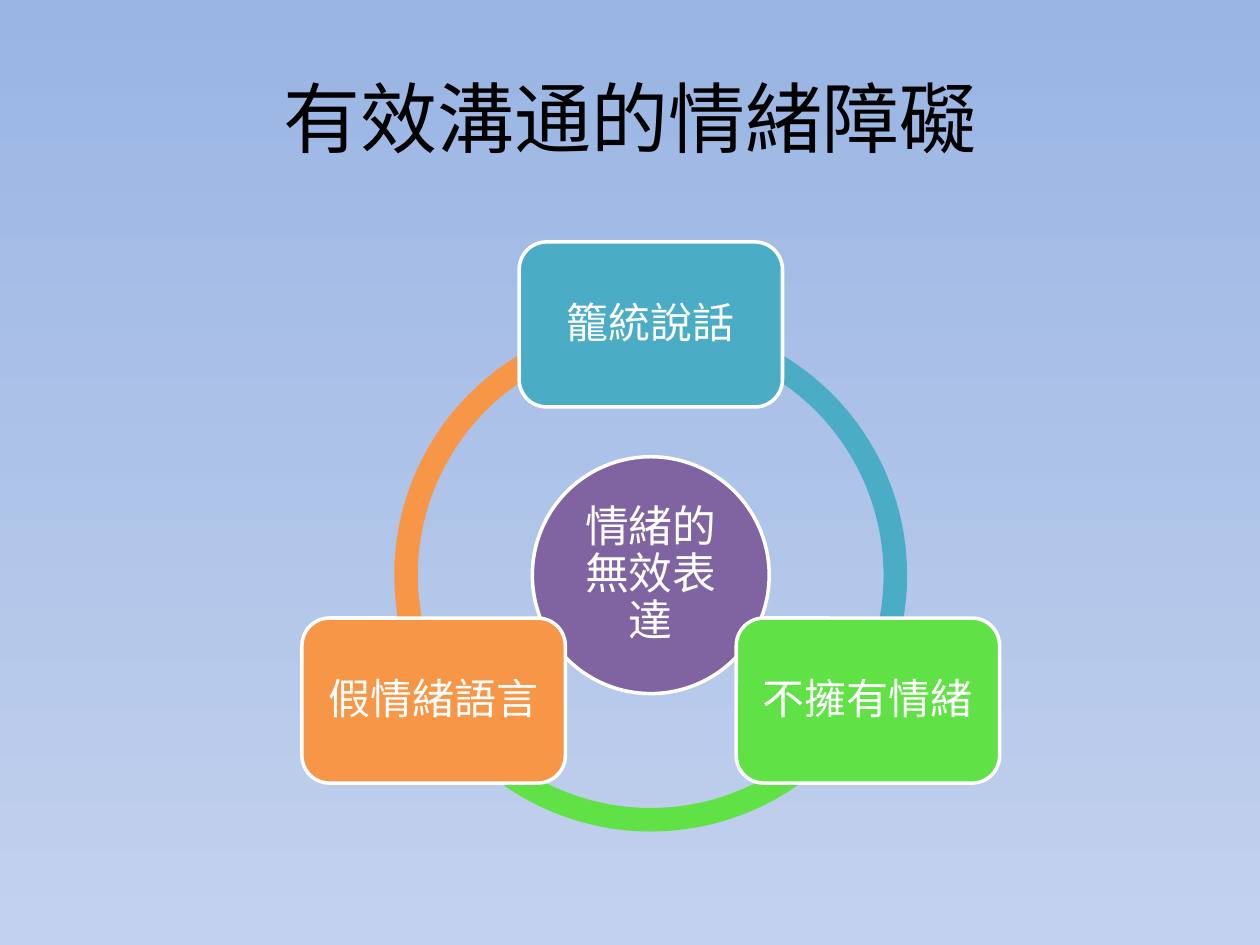
import math

from lxml import etree
from pptx import Presentation
from pptx.dml.color import RGBColor
from pptx.enum.shapes import MSO_SHAPE
from pptx.enum.text import MSO_ANCHOR, PP_ALIGN
from pptx.oxml.ns import qn
from pptx.util import Inches, Pt

ARC = MSO_SHAPE.BLOCK_ARC
OVAL = MSO_SHAPE.OVAL
ROUNDED = MSO_SHAPE.ROUNDED_RECTANGLE
MIDDLE = MSO_ANCHOR.MIDDLE
CENTER = PP_ALIGN.CENTER

FONT = "Noto Sans CJK SC"
TITLE_ONLY = 5
COLORS = {
    "sky_top": "9AB5E4", "sky_bottom": "C2D1ED",
    "black": "000000", "white": "FFFFFF", "purple": "8064A2",
    "teal": "4BACC6", "green": "60E146", "orange": "F79646",
}
# Label, colour and angle in degrees, clockwise from the right
NODES = [
    ("籠統說話", "teal", 270),
    ("不擁有情緒", "green", 30),
    ("假情緒語言", "orange", 150),
]


def rgb(name):
    return RGBColor.from_string(COLORS[name])


def write_text(shape, text, *, size, color, margin=None, line_spacing=None):
    frame = shape.text_frame
    frame.word_wrap = True
    frame.vertical_anchor = MIDDLE
    if margin is not None:
        frame.margin_left = frame.margin_right = margin
        frame.margin_top = frame.margin_bottom = margin
    paragraph = frame.paragraphs[0]
    paragraph.alignment = CENTER
    paragraph.line_spacing = line_spacing
    run = paragraph.add_run()
    run.text = text
    run.font.size = Pt(size)
    run.font.color.rgb = rgb(color)
    run.font.name = FONT
    # East Asian characters take their own typeface setting
    etree.SubElement(run.font._element, qn("a:ea"), typeface=FONT)


def add_filled_shape(shapes, kind, center_x, center_y, width, height, color, outlined=True):
    shape = shapes.add_shape(
        kind, Inches(center_x - width / 2), Inches(center_y - height / 2),
        Inches(width), Inches(height))
    shape.shadow.inherit = False
    shape.fill.solid()
    shape.fill.fore_color.rgb = rgb(color)
    if outlined:
        shape.line.color.rgb = rgb("white")
        shape.line.width = Pt(2)
    else:
        shape.line.fill.background()
    return shape


def paint_background(slide):
    fill = slide.background.fill
    fill.gradient()
    fill.gradient_angle = 270
    for stop, position, color in zip(fill.gradient_stops, (0, 1), ("sky_top", "sky_bottom")):
        stop.position = position
        stop.color.rgb = rgb(color)


def place_title(slide, text, left, top, width, height):
    title = slide.shapes.title
    title.left, title.top = Inches(left), Inches(top)
    title.width, title.height = Inches(width), Inches(height)
    write_text(title, text, size=44, color="black")


def build_cycle(slide, center_text, nodes, left, top, size):
    """Draw a ring of arcs, a centre circle and one box per node."""
    shapes = slide.shapes.add_group_shape().shapes
    center_x, center_y = left + size / 2, top + size / 2
    orbit = 1.99
    step = 360 / len(nodes)
    label_format = {"color": "white", "margin": Inches(0.03), "line_spacing": 0.9}

    # Ring: each arc runs from its node to the next
    for _, color, angle in reversed(nodes):
        arc = add_filled_shape(shapes, ARC, center_x, center_y, size, size, color, outlined=False)
        # Arc angles are stored in 60000ths of a degree, adjustments in 100000ths
        arc.adjustments[0] = angle * 0.6
        arc.adjustments[1] = (angle + step) % 360 * 0.6
        arc.adjustments[2] = 0.046

    # Centre circle
    circle = add_filled_shape(shapes, OVAL, center_x, center_y, 1.88, 1.88, "purple")
    write_text(circle, center_text, size=25, **label_format)

    # Node boxes
    for label, color, angle in nodes:
        x = center_x + orbit * math.cos(math.radians(angle))
        y = center_y + orbit * math.sin(math.radians(angle))
        box = add_filled_shape(shapes, ROUNDED, x, y, 2.09, 1.31, color)
        write_text(box, label, size=24, **label_format)


def main():
    presentation = Presentation()
    presentation.slide_width = Inches(10)
    presentation.slide_height = Inches(7.5)
    slide = presentation.slides.add_slide(presentation.slide_layouts[TITLE_ONLY])
    paint_background(slide)
    place_title(slide, "有效溝通的情緒障礙", 0.5, 0.3, 9, 1.25)
    build_cycle(slide, "情緒的無效表達", NODES, 3.13, 2.53, 4.07)
    presentation.save("out.pptx")


if __name__ == "__main__":
    main()
